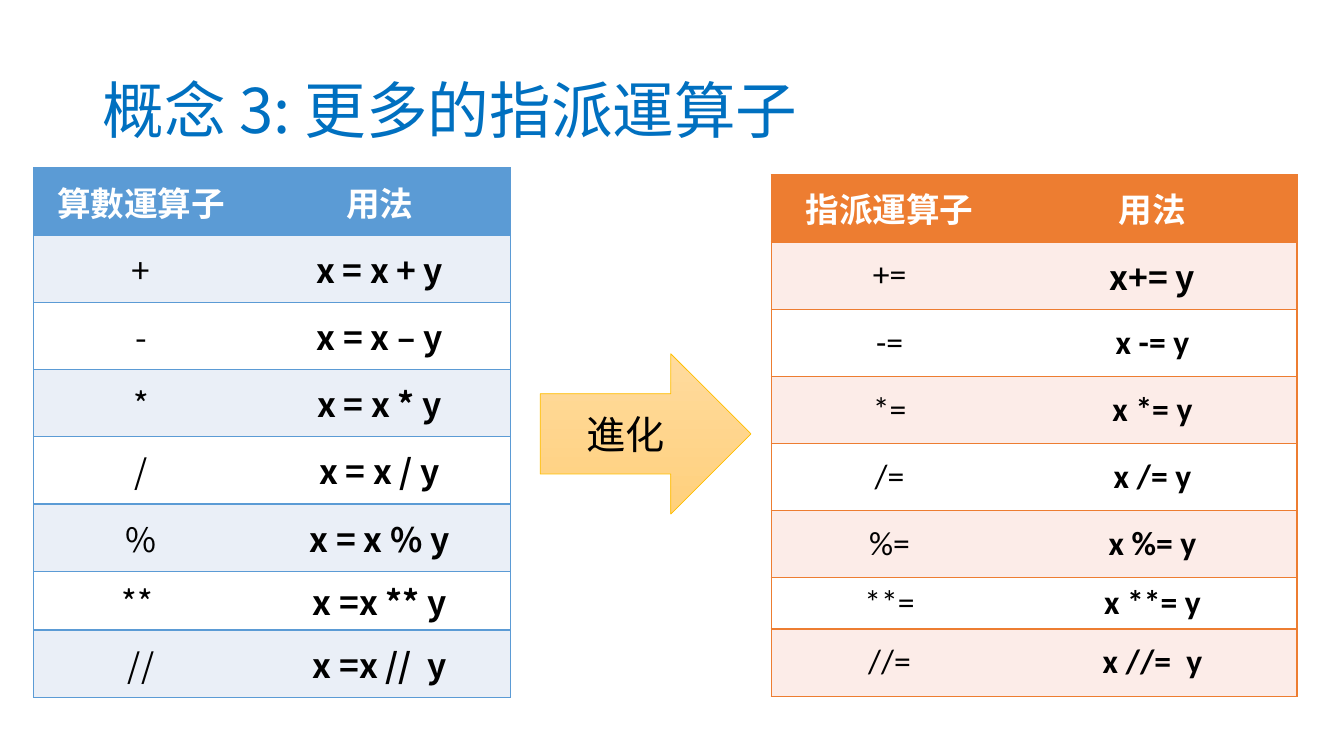
from pptx import Presentation
from pptx.dml.color import RGBColor
from pptx.enum.shapes import MSO_SHAPE
from pptx.enum.text import MSO_ANCHOR, PP_ALIGN
from pptx.oxml import parse_xml
from pptx.oxml.ns import nsdecls
from pptx.util import Emu, Inches, Pt

COLUMNS, ROWS = 40, 22.5
GRID = Inches(1) // 3
SANS, LATIN = "Noto Sans CJK SC", "Calibri"
COLORS = {
    "title": "0070C0", "black": "000000", "white": "FFFFFF",
    "blue": "5B9BD5", "blue band": "EAEFF7",
    "orange": "ED7D31", "orange band": "FCECE8",
    "arrow top": "FFDB9E", "arrow bottom": "FFD07C", "arrow line": "FFC000",
}
ROW_HEIGHTS = [2] * 6 + [1.45, 2]
ARITHMETIC = [
    ("算數運算子", "用法"), ("+", "x = x + y"), ("-", "x = x – y"),
    ("*", "x = x * y"), ("/", "x = x / y"), ("%", "x = x % y"),
    ("** ", "x =x ** y"), ("//", "x =x //  y"),
]
ASSIGNMENT = [
    ("指派運算子", "用法"), ("+=", "x+= y"), ("-=", "x -= y"),
    ("*=", "x *= y"), ("/=", "x /= y"), ("%=", "x %= y"),
    ("**=", "x **= y"), ("//=", "x //=  y"),
]


def grid(*counts):
    return [Emu(round(count * GRID)) for count in counts]


def color(name):
    return RGBColor.from_string(COLORS[name])


class OperatorSlide:
    def __init__(self, presentation):
        self.slide = presentation.slides.add_slide(presentation.slide_layouts[5])

    def set_text(self, frame, text, size, color_name, align=PP_ALIGN.CENTER,
                 bold=False, font_name=SANS):
        frame.text = text
        paragraph = frame.paragraphs[0]
        paragraph.alignment = align
        font = paragraph.font
        font.name, font.size, font.bold = font_name, Pt(size), bold
        font.color.rgb = color(color_name)
        # East Asian typeface
        properties = paragraph._p.pPr.find("{*}defRPr")
        properties.append(parse_xml(f'<a:ea {nsdecls("a")} typeface="{font_name}"/>'))
        return paragraph

    def title(self, text, left, top, width, height):
        shape = self.slide.shapes.title
        shape.left, shape.top, shape.width, shape.height = grid(left, top, width, height)
        shape.text_frame.vertical_anchor = MSO_ANCHOR.MIDDLE
        paragraph = self.set_text(shape.text_frame, text, 44, "title", PP_ALIGN.LEFT)
        paragraph.line_spacing = 0.9

    def borders(self, cell, accent, hidden_side):
        properties = cell._tc.get_or_add_tcPr()
        for side in "LRTB":
            paint = ("<a:noFill/>" if side == hidden_side else
                     f'<a:solidFill><a:srgbClr val="{COLORS[accent]}"/></a:solidFill>')
            properties.append(parse_xml(
                f'<a:ln{side} {nsdecls("a")} w="{Pt(1)}">{paint}</a:ln{side}>'))

    def table(self, entries, left, top, widths, accent, font_for):
        frame = self.slide.shapes.add_table(
            len(entries), len(widths), *grid(left, top, sum(widths), sum(ROW_HEIGHTS)))
        table = frame.table
        for column, width in zip(table.columns, grid(*widths)):
            column.width = width
        for row, height in zip(table.rows, grid(*ROW_HEIGHTS)):
            row.height = height
        for i, entry in enumerate(entries):
            fill = accent if i == 0 else f"{accent} band" if i % 2 else "white"
            for j, text in enumerate(entry):
                cell = table.cell(i, j)
                cell.vertical_anchor = MSO_ANCHOR.MIDDLE
                self.borders(cell, accent, "L" if j else "R")
                cell.fill.solid()
                cell.fill.fore_color.rgb = color(fill)
                self.set_text(cell.text_frame, text, 24, "black" if i else "white",
                              bold=i == 0 or j == 1, font_name=font_for(i, j))

    def arrow(self, text, left, top, width, height):
        shape = self.slide.shapes.add_shape(
            MSO_SHAPE.RIGHT_ARROW, *grid(left, top, width, height))
        shape.shadow.inherit = False
        shape.fill.gradient()
        shape.fill.gradient_angle = 270
        for stop, name in zip(shape.fill.gradient_stops, ("arrow top", "arrow bottom")):
            stop.color.rgb = color(name)
        shape.line.color.rgb = color("arrow line")
        shape.line.width = Pt(0.5)
        shape.text_frame.vertical_anchor = MSO_ANCHOR.MIDDLE
        self.set_text(shape.text_frame, text, 28, "black")


def main():
    presentation = Presentation()
    presentation.slide_width, presentation.slide_height = grid(COLUMNS, ROWS)
    page = OperatorSlide(presentation)

    page.title("概念 3: 更多的指派運算子", 2.75, 1.2, 34.5, 4.35)

    # Operators before and after, joined by the arrow
    page.table(ARITHMETIC, 1, 5, (6.4, 7.8), "blue", lambda i, j: SANS)
    page.table(ASSIGNMENT, 22.95, 5.2, (7.05, 8.6), "orange",
               lambda i, j: SANS if i == 0 or (i, j) == (1, 1) else LATIN)
    page.arrow("進化", 16.08, 10.53, 6.27, 4.77)

    presentation.save("out.pptx")


if __name__ == "__main__":
    main()
